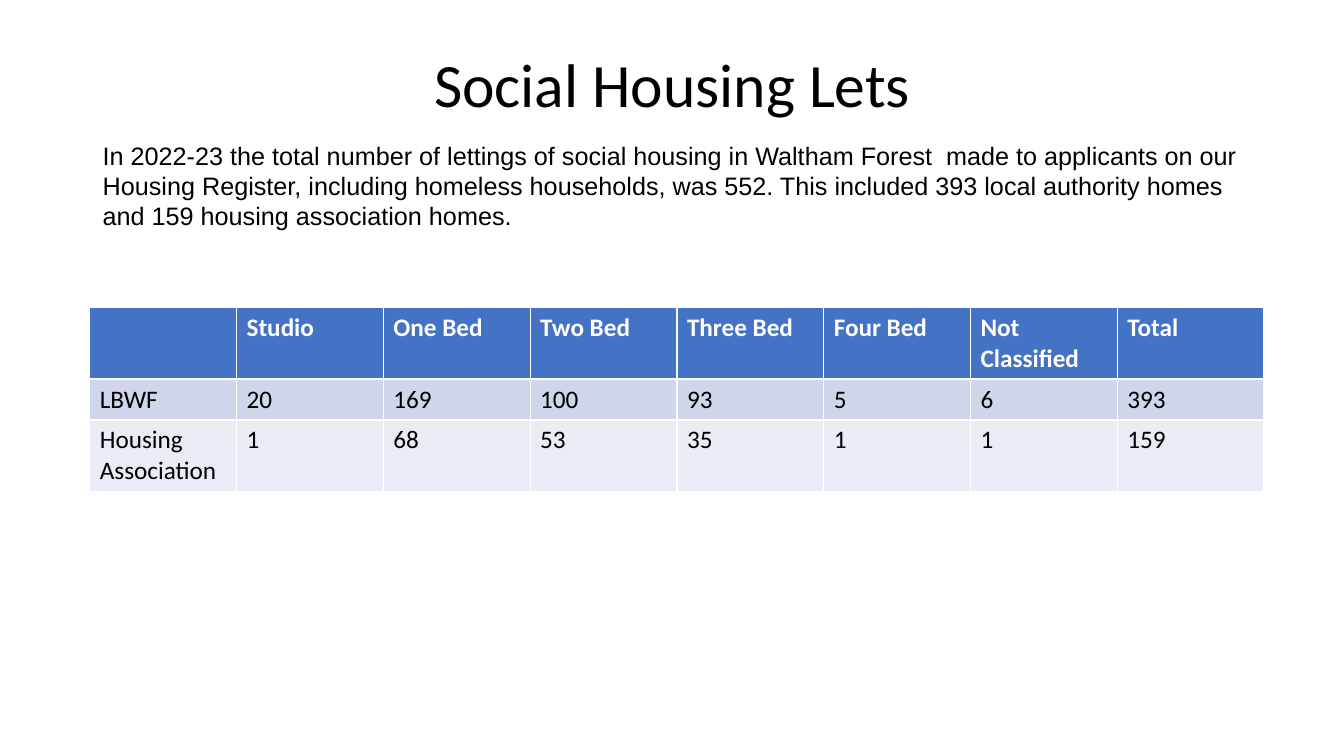
from pptx import Presentation
from pptx.dml.color import RGBColor
from pptx.enum import text
from pptx.util import Inches, Pt

BLACK = RGBColor(0x00, 0x00, 0x00)
WHITE = RGBColor(0xFF, 0xFF, 0xFF)
HEADER_BLUE = RGBColor(0x44, 0x72, 0xC4)
BAND_DARK = RGBColor(0xCF, 0xD5, 0xEA)
BAND_LIGHT = RGBColor(0xE9, 0xEB, 0xF5)

INTRO = (
    "In 2022-23 the total number of lettings of social housing in Waltham Forest  made to "
    "applicants on our Housing Register, including homeless households, was 552. This included "
    "393 local authority homes and 159 housing association homes."
)
LETS = [
    ["", "Studio", "One Bed", "Two Bed", "Three Bed", "Four Bed", "Not Classified", "Total"],
    ["LBWF", "20", "169", "100", "93", "5", "6", "393"],
    ["Housing Association", "1", "68", "53", "35", "1", "1", "159"],
]
ROW_FILLS = [HEADER_BLUE, BAND_DARK, BAND_LIGHT]
ROW_HEIGHTS = [0.7, 0.4, 0.7]
TABLE_WIDTH = 11.65


def set_font(p, name, size, color, bold=False):
    for r in p.runs:
        r.font.name = name
        r.font.size = Pt(size)
        r.font.color.rgb = color
        r.font.bold = bold


prs = Presentation()
prs.slide_width = Inches(13.33)
prs.slide_height = Inches(7.5)
s = prs.slides.add_slide(prs.slide_layouts[5])

# Title
title = s.shapes.title
title.left, title.top = Inches(0.92), Inches(0.4)
title.width, title.height = Inches(11.5), Inches(0.94)
tf = title.text_frame
tf.text = "Social Housing Lets"
tf.vertical_anchor = text.MSO_ANCHOR.MIDDLE
p = tf.paragraphs[0]
p.alignment = text.PP_ALIGN.CENTER
p.line_spacing = 0.9
set_font(p, "Calibri", 44, BLACK)

# Lets by landlord and home size; the default table style draws the white borders
tbl = s.shapes.add_table(
    len(LETS), len(LETS[0]), Inches(0.89), Inches(3.05), Inches(TABLE_WIDTH), Inches(sum(ROW_HEIGHTS))
).table
for col in tbl.columns:
    col.width = Inches(TABLE_WIDTH / len(LETS[0]))
for i, values in enumerate(LETS):
    tbl.rows[i].height = Inches(ROW_HEIGHTS[i])
    is_header = i == 0
    for j, value in enumerate(values):
        cell = tbl.cell(i, j)
        cell.fill.solid()
        cell.fill.fore_color.rgb = ROW_FILLS[i]
        cell.text = value
        set_font(cell.text_frame.paragraphs[0], "Calibri", 18, WHITE if is_header else BLACK, is_header)

# Introduction
intro = s.shapes.add_textbox(Inches(0.92), Inches(1.34), Inches(11.5), Inches(1.31))
tf = intro.text_frame
tf.word_wrap = True
tf.text = INTRO
set_font(tf.paragraphs[0], "Arial", 18, BLACK)

prs.save("out.pptx")
